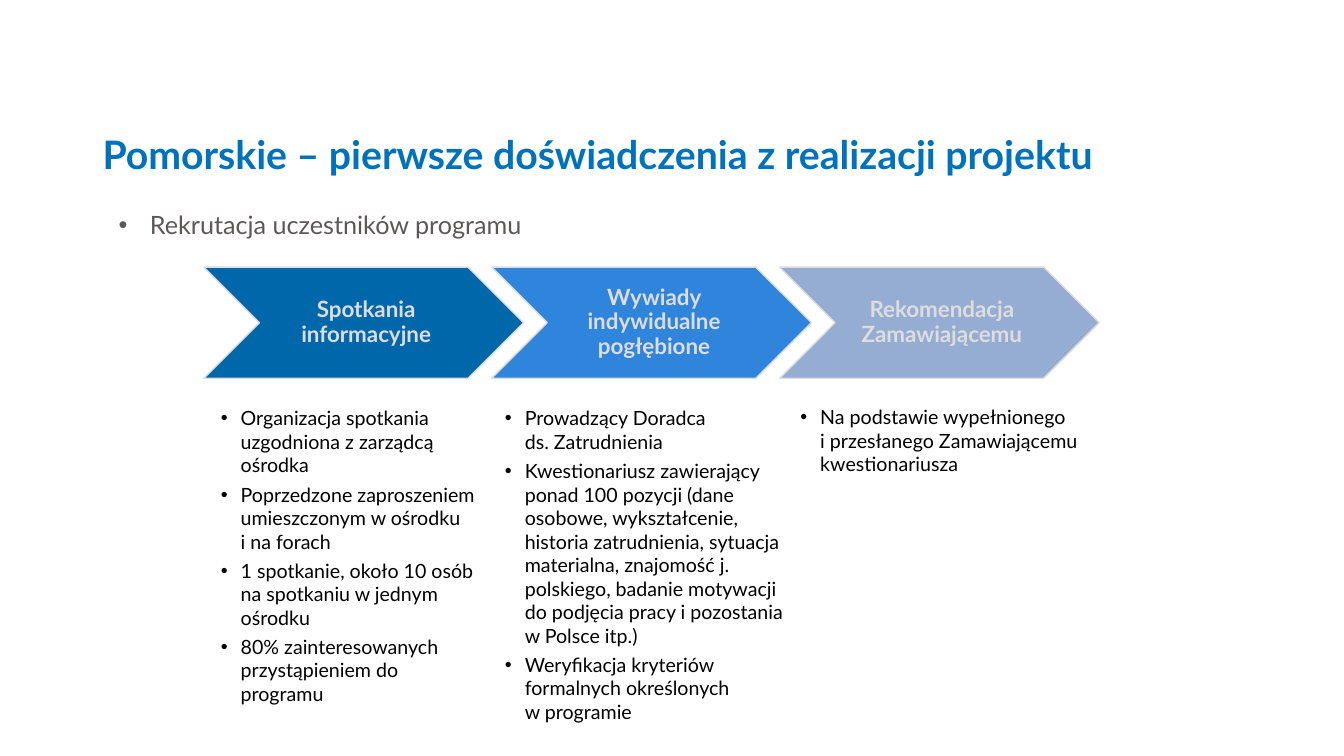
from dataclasses import dataclass

from lxml.etree import SubElement
from pptx import Presentation
from pptx.dml.color import RGBColor
from pptx.enum.shapes import MSO_SHAPE
from pptx.enum.text import MSO_ANCHOR, MSO_AUTO_SIZE, PP_ALIGN
from pptx.oxml.ns import qn
from pptx.util import Pt


@dataclass(frozen=True)
class Theme:
    font: str = "Lato"
    title: str = "0072BC"
    topic: str = "5C5858"
    body: str = "000000"
    pale: str = "DDDDDD"
    steps: tuple = ("0067AB", "2E85DB", "95ADD3")
    title_size: float = 28
    topic_size: float = 18
    step_size: float = 16
    body_size: float = 14


THEME = Theme()

STEPS = ["Spotkania informacyjne", "Wywiady indywidualne pogłębione", "Rekomendacja Zamawiającemu"]

# Box (left, top, width, height) and points of each column
DETAILS = [
    ((154.8, 287.3, 193, 221.8), [
        "Organizacja spotkania uzgodniona z zarządcą ośrodka",
        "Poprzedzone zaproszeniem umieszczonym w ośrodku\ni na forach",
        "1 spotkanie, około 10 osób na spotkaniu w jednym ośrodku",
        "80% zainteresowanych przystąpieniem do programu",
    ]),
    ((357.8, 287.3, 211, 234), [
        "Prowadzący Doradca\nds. Zatrudnienia",
        "Kwestionariusz zawierający ponad 100 pozycji (dane osobowe, wykształcenie, "
        "historia zatrudnienia, sytuacja materialna, znajomość j. polskiego, "
        "badanie motywacji do podjęcia pracy i pozostania w Polsce itp.)",
        "Weryfikacja kryteriów formalnych określonych\nw programie",
    ]),
    ((568.8, 286.6, 216.7, 56.9), [
        "Na podstawie wypełnionego\ni przesłanego Zamawiającemu kwestionariusza",
    ]),
]


def write_text(frame, paragraphs, *, size, color, bold=False, align=PP_ALIGN.LEFT,
               anchor=MSO_ANCHOR.TOP, insets=(7.2, 3.6, 7.2, 3.6), line_spacing=None,
               space_before=0, bullet_indent=None, level=0):
    """Fill a text frame; bullet_indent is (left margin, hanging width)."""
    frame.word_wrap = True
    frame.vertical_anchor = anchor
    (frame.margin_left, frame.margin_top,
     frame.margin_right, frame.margin_bottom) = map(Pt, insets)
    for index, text in enumerate(paragraphs):
        paragraph = frame.add_paragraph() if index else frame.paragraphs[0]
        paragraph.text = text
        paragraph.alignment = align
        paragraph.level = level
        paragraph.space_before = Pt(space_before if index else 0)
        if line_spacing:
            paragraph.line_spacing = line_spacing
        if bullet_indent:
            margin, hanging = bullet_indent
            properties = paragraph._p.get_or_add_pPr()
            properties.set("marL", str(Pt(margin)))
            properties.set("indent", str(-Pt(hanging)))
            SubElement(properties, qn("a:buFont"), typeface="Arial")
            SubElement(properties, qn("a:buChar"), char="•")
        for line_break in paragraph._p.findall(qn("a:br")):
            SubElement(line_break, qn("a:rPr"), sz=str(int(size * 100)))
        for run in paragraph.runs:
            run.font.name = THEME.font
            run.font.size = Pt(size)
            run.font.bold = bold
            run.font.color.rgb = RGBColor.from_string(color)


def add_text(slide, box, paragraphs, **text_format):
    frame = slide.shapes.add_textbox(*map(Pt, box)).text_frame
    write_text(frame, paragraphs, **text_format)
    return frame


def add_heading(slide, box):
    left, top, width, height = box
    title_height = 49.7
    topic_top = 56.9
    add_text(slide, (left, top, width, title_height),
             ["Pomorskie – pierwsze doświadczenia z realizacji projektu"],
             size=THEME.title_size, color=THEME.title, bold=True)
    add_text(slide, (left, top + topic_top, width, height - topic_top),
             ["Rekrutacja uczestników programu"],
             size=THEME.topic_size, color=THEME.topic, bullet_indent=(33.8, 22.3), level=1)


def add_process(slide, box):
    """Spread overlapping chevrons evenly over the box."""
    left, top, width, height = box
    step_width = 228.4
    pitch = (width - step_width) / (len(STEPS) - 1)
    for index, (label, color) in enumerate(zip(STEPS, THEME.steps)):
        step = slide.shapes.add_shape(MSO_SHAPE.CHEVRON, Pt(left + index * pitch), Pt(top),
                                      Pt(step_width), Pt(height))
        step.shadow.inherit = False
        step.fill.solid()
        step.fill.fore_color.rgb = RGBColor.from_string(color)
        step.line.color.rgb = RGBColor.from_string(THEME.pale)
        step.line.width = Pt(1)
        write_text(step.text_frame, [label], size=THEME.step_size, color=THEME.pale, bold=True,
                   align=PP_ALIGN.CENTER, anchor=MSO_ANCHOR.MIDDLE,
                   insets=(5, 1.4, 1.4, 1.4), line_spacing=0.9)


def add_details(slide, box, points):
    frame = add_text(slide, box, points, size=THEME.body_size, color=THEME.body,
                     insets=(2.9,) * 4, space_before=4, bullet_indent=(14.2, 14.2))
    frame.auto_size = MSO_AUTO_SIZE.SHAPE_TO_FIT_TEXT


def main():
    presentation = Presentation()
    presentation.slide_width, presentation.slide_height = Pt(960), Pt(540)
    slide = presentation.slides.add_slide(presentation.slide_layouts[6])
    add_heading(slide, (66.2, 89.3, 828, 439.2))
    add_process(slide, (145.6, 190.8, 639.6, 79.4))
    for box, points in DETAILS:
        add_details(slide, box, points)
    presentation.save("out.pptx")


if __name__ == "__main__":
    main()
